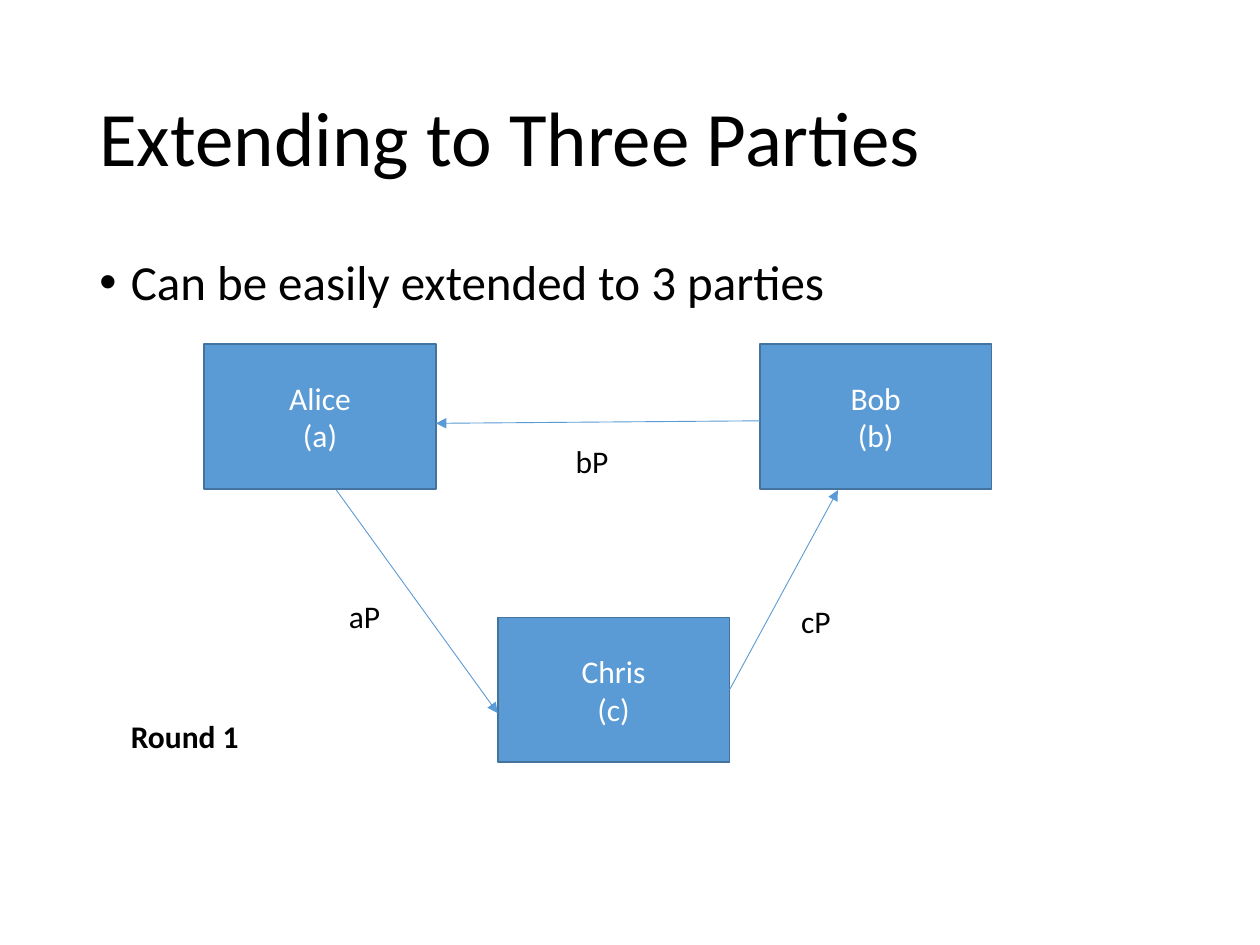
import pptx
import pptx.util
import pptx.dml.color
import pptx.enum.shapes
import pptx.enum.text
import pptx.oxml.ns
from lxml import etree

Inches = pptx.util.Inches
Pt = pptx.util.Pt
ALIGN = pptx.enum.text.PP_ALIGN
ANCHOR = pptx.enum.text.MSO_ANCHOR
BLUE = "5B9BD5"
BOX_W, BOX_H = 1.84, 1.15


def paint(color, value):
    color.rgb = pptx.dml.color.RGBColor.from_string(value)


def add_tag(parent, name, **attrs):
    return etree.SubElement(parent, pptx.oxml.ns.qn(name), attrs)


def style(frame, size, color, bold=False, align=ALIGN.LEFT):
    for para in frame.paragraphs:
        para.alignment = align
        for run in para.runs:
            run.font.name = "Calibri"
            run.font.size = Pt(size)
            run.font.bold = bold
            paint(run.font.color, color)


def add_text(slide, text, left, top, width, height, size=18, bold=False):
    area = slide.shapes.add_textbox(
        Inches(left), Inches(top), Inches(width), Inches(height))
    frame = area.text_frame
    frame.word_wrap = True
    frame.text = text
    style(frame, size, "000000", bold)
    return frame


def add_title(slide, text):
    frame = add_text(slide, text, 0.69, 0.4, 8.62, 1.45, 44)
    frame.vertical_anchor = ANCHOR.MIDDLE
    frame.paragraphs[0].line_spacing = 0.9


def add_bullet(slide, text):
    frame = add_text(slide, text, 0.69, 2, 8.62, 4.76, 28)
    para = frame.paragraphs[0]
    para.line_spacing = 0.9
    para.space_before = Pt(10)
    props = para._p.get_or_add_pPr()
    props.set("marL", str(Inches(0.25)))
    props.set("indent", str(Inches(-0.25)))
    add_tag(props, "a:buFont", typeface="Arial")
    add_tag(props, "a:buChar", char="•")


def add_party(slide, name, key, left, top):
    box = slide.shapes.add_shape(
        pptx.enum.shapes.MSO_SHAPE.RECTANGLE,
        Inches(left), Inches(top), Inches(BOX_W), Inches(BOX_H))
    box.shadow.inherit = False
    box.fill.solid()
    paint(box.fill.fore_color, BLUE)
    paint(box.line.color, "43739E")
    box.line.width = Pt(1)
    frame = box.text_frame
    frame.text = f"{name}\n({key})"
    frame.vertical_anchor = ANCHOR.MIDDLE
    style(frame, 18, "FFFFFF", align=ALIGN.CENTER)
    return box


def add_arrow(slide, start, end):
    points = [Inches(value) for value in (*start, *end)]
    arrow = slide.shapes.add_connector(
        pptx.enum.shapes.MSO_CONNECTOR.STRAIGHT, *points)
    paint(arrow.line.color, BLUE)
    arrow.line.width = Pt(0.5)
    add_tag(arrow.line._get_or_add_ln(), "a:tailEnd", type="triangle")
    add_tag(arrow._element.spPr, "a:effectLst")
    return arrow


def main():
    deck = pptx.Presentation()
    deck.slide_width = Inches(10)
    deck.slide_height = Inches(7.5)
    slide = deck.slides.add_slide(deck.slide_layouts[6])

    add_title(slide, "Extending to Three Parties")
    add_bullet(slide, "Can be easily extended to 3 parties")

    add_party(slide, "Alice", "a", 1.62, 2.73)
    add_party(slide, "Bob", "b", 6.03, 2.73)
    chris = add_party(slide, "Chris", "c", 3.95, 4.9)

    add_arrow(slide, (2.67, 3.89), (3.95, 5.66))
    add_arrow(slide, (6.03, 3.34), (3.46, 3.36))
    add_arrow(slide, (5.79, 5.47), (6.65, 3.89)).begin_connect(chris, 3)

    for text, left, top in (
            ("aP", 2.67, 4.69), ("bP", 4.47, 3.46), ("cP", 6.26, 4.73)):
        add_text(slide, text, left, top, 1.38, 0.4)
    add_text(slide, "Round 1", 0.94, 5.64, 1.63, 0.4, bold=True)

    deck.save("out.pptx")


if __name__ == "__main__":
    main()
